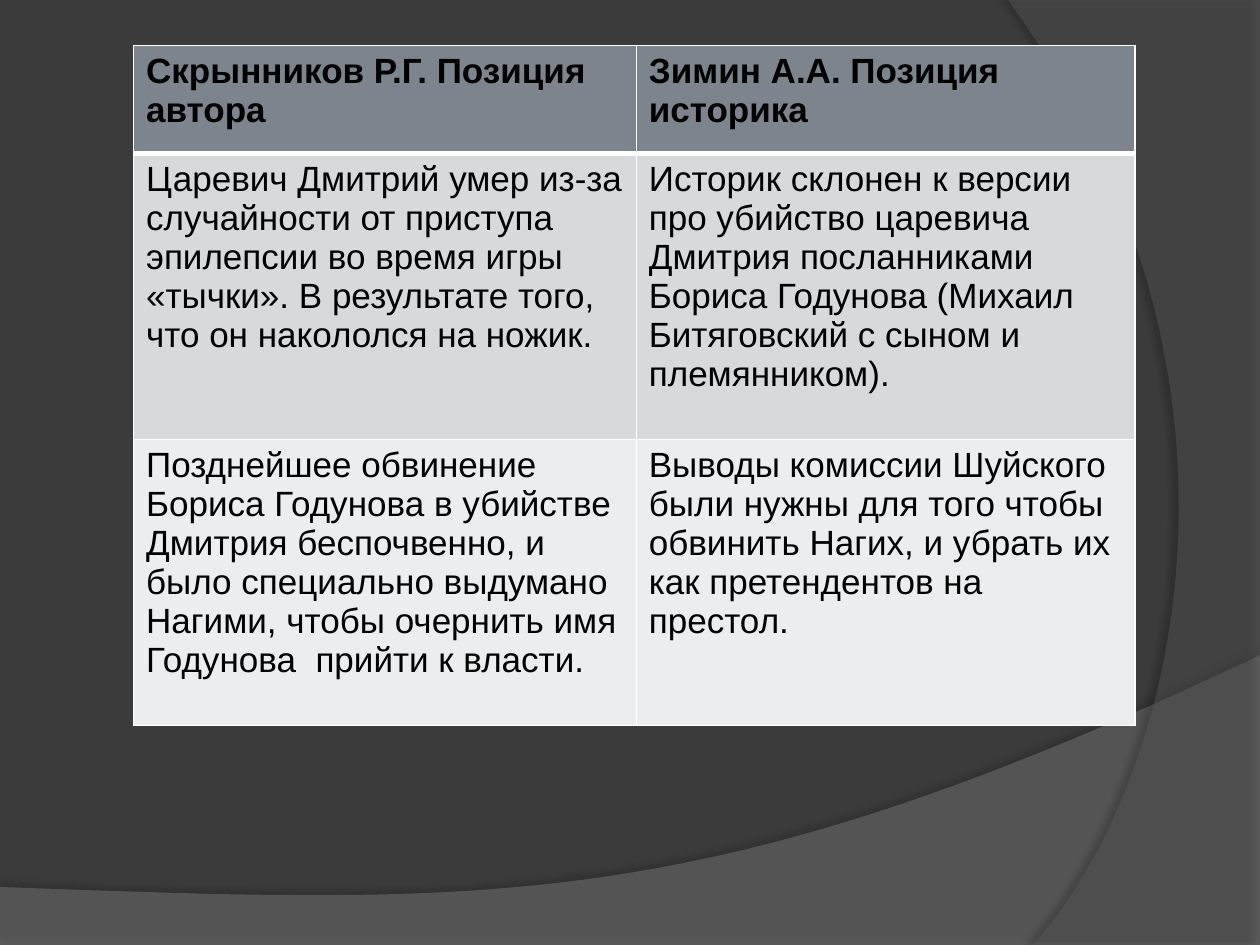
import dataclasses

import pptx
import pptx.dml.color
import pptx.oxml
import pptx.oxml.ns
import pptx.util
from pptx.util import Inches


@dataclasses.dataclass(frozen=True)
class Theme:
    background: str = "3B3B3B"
    wave: str = "7F7F7F"
    arc: str = "5E5E5E"
    text: str = "000000"
    border: str = "FFFFFF"
    row_fills: tuple = ("7E848D", "D8D9DB", "ECEDEE")
    font: str = "Arial"
    text_size: int = 20
    thin: int = 1
    thick: int = 3


THEME = Theme()
NAMESPACE = pptx.oxml.ns.nsdecls("a")

POSITIONS = [
    ("Скрынников Р.Г. Позиция автора", "Зимин А.А. Позиция историка"),
    ("Царевич Дмитрий умер из-за случайности от приступа эпилепсии во время игры "
     "«тычки». В результате того, что он накололся на ножик.",
     "Историк склонен к версии про убийство царевича Дмитрия посланниками Бориса "
     "Годунова (Михаил Битяговский с сыном и племянником)."),
    ("Позднейшее обвинение Бориса Годунова в убийстве Дмитрия беспочвенно, и было "
     "специально выдумано Нагими, чтобы очернить имя Годунова  прийти к власти.",
     "Выводы комиссии Шуйского были нужны для того чтобы обвинить Нагих, и убрать "
     "их как претендентов на престол."),
]


def color(code):
    return pptx.dml.color.RGBColor.from_string(code)


def curve(start, control_1, control_2, end, steps=48):
    """Points along a cubic Bezier curve."""
    points = []
    for step in range(steps + 1):
        t = step / steps
        weights = ((1 - t) ** 3, 3 * t * (1 - t) ** 2, 3 * t ** 2 * (1 - t), t ** 3)
        corners = (start, control_1, control_2, end)
        points.append(tuple(sum(w * corner[axis] for w, corner in zip(weights, corners))
                            for axis in (0, 1)))
    return points


def add_band(page, box, points, fill, opacity, shadow):
    """Translucent outline; its points are fractions of the box."""
    left, top, width, height = box
    places = [(Inches(left + x * width), Inches(top + y * height)) for x, y in points]
    builder = page.shapes.build_freeform(*places[0])
    builder.add_line_segments(places[1:], close=True)
    band = builder.convert_to_shape()
    band.line.fill.background()
    band.fill.solid()
    band.fill.fore_color.rgb = color(fill)
    tone = band.fill._xPr.find(".//" + pptx.oxml.ns.qn("a:srgbClr"))
    tone.append(pptx.oxml.parse_xml(f'<a:alpha {NAMESPACE} val="{opacity * 1000}"/>'))

    band.shadow.inherit = False
    strength, blur, distance, angle = shadow
    effects = band._element.spPr.find(pptx.oxml.ns.qn("a:effectLst"))
    effects.append(pptx.oxml.parse_xml(
        f'<a:outerShdw {NAMESPACE} blurRad="{pptx.util.Pt(blur)}" '
        f'dist="{pptx.util.Pt(distance)}" dir="{angle * 60000}" algn="ctr" rotWithShape="0">'
        f'<a:srgbClr val="000000"><a:alpha val="{strength * 1000}"/></a:srgbClr>'
        '</a:outerShdw>'))


def add_backdrop(page, box):
    left, top, width, height = box
    page.background.fill.solid()
    page.background.fill.fore_color.rgb = color(THEME.background)

    # Wave along the bottom
    wave = curve((1, 0), (0.56, 0.91), (0.39, 0.86), (0, 0.8)) + [(0, 1), (1, 1)]
    add_band(page, (left, top + 5.2, width, height - 5.2), wave,
             THEME.wave, 45, (35, 4, 3.5, 270))

    # Arc down the right side
    arc = curve((0.1, 1), (0.67, 0.83), (1.09, 0.4), (0, 0)) + [(1, 0), (1, 1)]
    add_band(page, (left + 8, top, width - 8, height), arc,
             THEME.arc, 40, (45, 4, 4, 180))


def style_cell(cell, text, row):
    # Borders; the rule under the header is thick on both sides
    heavy = {0: "B", 1: "T"}.get(row)
    properties = cell._tc.get_or_add_tcPr()
    for side in "LRTB":
        weight = pptx.util.Pt(THEME.thick if side == heavy else THEME.thin)
        properties.append(pptx.oxml.parse_xml(
            f'<a:ln{side} {NAMESPACE} w="{weight}"><a:solidFill>'
            f'<a:srgbClr val="{THEME.border}"/></a:solidFill></a:ln{side}>'))
    cell.fill.solid()
    cell.fill.fore_color.rgb = color(THEME.row_fills[row])

    span = cell.text_frame.paragraphs[0].add_run()
    span.text = text
    span.font.name = THEME.font
    span.font.size = pptx.util.Pt(THEME.text_size)
    span.font.bold = row == 0
    span.font.color.rgb = color(THEME.text)


def add_comparison(page, box, column_widths, row_heights):
    frame = page.shapes.add_table(len(row_heights), len(column_widths),
                                  *(Inches(length) for length in box))
    table = frame.table
    for column, width in zip(table.columns, column_widths):
        column.width = Inches(width)
    for row, height in zip(table.rows, row_heights):
        row.height = Inches(height)
    for row, texts in enumerate(POSITIONS):
        for column, text in enumerate(texts):
            style_cell(table.cell(row, column), text, row)


def main():
    deck = pptx.Presentation()
    deck.slide_width, deck.slide_height = Inches(10), Inches(7.5)
    page = deck.slides.add_slide(deck.slide_layouts[6])
    add_backdrop(page, (0, 0, 10, 7.5))
    add_comparison(page, (1.06, 0.36, 7.95, 5.4), (3.99, 3.96), (0.86, 2.27, 2.27))
    deck.save("out.pptx")


if __name__ == "__main__":
    main()
